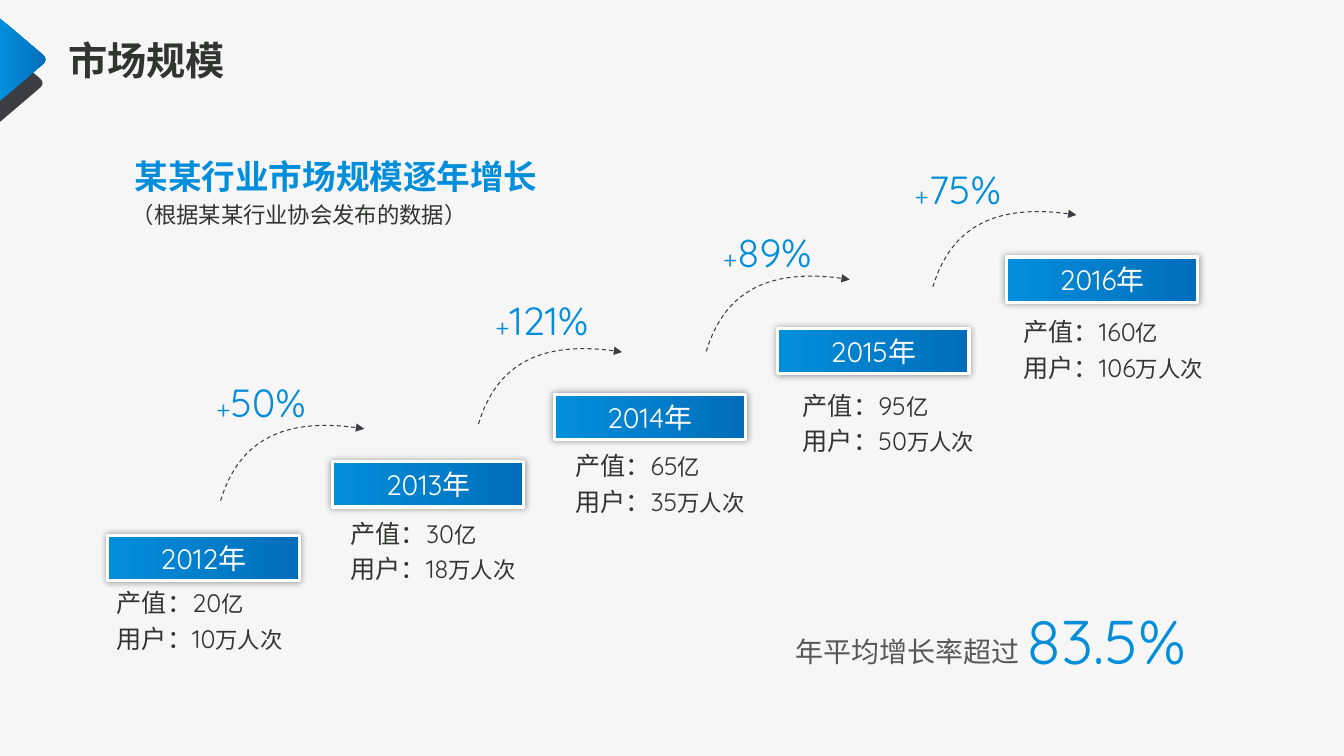
import dataclasses

import lxml.etree
import pptx
import pptx.dml.color
import pptx.enum.dml
import pptx.enum.lang
import pptx.enum.shapes
import pptx.enum.text
import pptx.oxml.ns
import pptx.util

Pt = pptx.util.Pt
qn = pptx.oxml.ns.qn
ALIGN = pptx.enum.text.PP_ALIGN
ANCHOR = pptx.enum.text.MSO_ANCHOR


@dataclasses.dataclass(frozen=True)
class Theme:
    font: str = "Quicksand"
    paper: str = "F6F6F6"
    ink: str = "313530"
    muted: str = "575757"
    dark: str = "3C3D42"
    white: str = "FFFFFF"
    blue: str = "038EDB"
    deep_blue: str = "026EBB"
    black: str = "000000"
    hero: int = 44
    title: int = 28
    heading: int = 24
    label: int = 20
    detail: int = 18
    small: int = 16


def rgb(code):
    return pptx.dml.color.RGBColor.from_string(code)


class SlideBuilder:
    def __init__(self, page, theme):
        self.page = page
        self.theme = theme
        page.background.fill.solid()
        page.background.fill.fore_color.rgb = rgb(theme.paper)

    def add_spans(self, frame, spans, align=ALIGN.LEFT, anchor=ANCHOR.TOP):
        frame.word_wrap = True
        frame.auto_size = pptx.enum.text.MSO_AUTO_SIZE.NONE
        frame.vertical_anchor = anchor
        para = frame.paragraphs[0]
        para.alignment = align
        for text, size, color, bold in spans:
            span = para.add_run()
            span.text = text
            font = span.font
            font.name = self.theme.font
            font.size = Pt(size)
            font.bold = bold
            font.color.rgb = rgb(color)
            font.language_id = pptx.enum.lang.MSO_LANGUAGE_ID.SIMPLIFIED_CHINESE
            lxml.etree.SubElement(
                span._r.get_or_add_rPr(), qn("a:ea"), typeface=self.theme.font)

    def title(self, left, top, width, height, text):
        box = self.page.shapes.title
        box.left, box.top, box.width, box.height = map(Pt, (left, top, width, height))
        self.add_spans(box.text_frame, [(text, self.theme.title, self.theme.ink, True)])

    def text(self, left, top, width, height, spans, align=ALIGN.LEFT):
        box = self.page.shapes.add_textbox(*map(Pt, (left, top, width, height)))
        self.add_spans(box.text_frame, spans, align)

    def blue_gradient(self, shape):
        shape.fill.gradient()
        shape.fill.gradient_angle = 0
        for stop, color in zip(
                shape.fill.gradient_stops, (self.theme.blue, self.theme.deep_blue)):
            stop.color.rgb = rgb(color)

    def banner(self, left, top, width, height, text):
        theme = self.theme
        box = self.page.shapes.add_shape(
            pptx.enum.shapes.MSO_SHAPE.RECTANGLE, *map(Pt, (left, top, width, height)))
        self.blue_gradient(box)
        box.line.color.rgb = rgb(theme.white)
        box.line.width = Pt(2.25)
        box.shadow.inherit = False
        effects = box._element.spPr.find(qn("a:effectLst"))
        shadow = lxml.etree.SubElement(
            effects, qn("a:outerShdw"), blurRad=str(Pt(5)), dist="0", dir="0",
            algn="ctr", rotWithShape="0")
        color = lxml.etree.SubElement(shadow, qn("a:srgbClr"), val=theme.black)
        lxml.etree.SubElement(color, qn("a:alpha"), val="40000")
        self.add_spans(box.text_frame, [(text, theme.label, theme.white, False)],
                       ALIGN.CENTER, ANCHOR.MIDDLE)

    def outline(self, points, curve_start, close):
        start, *rest = [(Pt(x), Pt(y)) for x, y in points]
        builder = self.page.shapes.build_freeform(*start, scale=1.0)
        builder.add_line_segments(rest, close=close)
        shape = builder.convert_to_shape()
        shape.shadow.inherit = False
        segments = shape._element.xpath(".//a:lnTo")[curve_start:curve_start + 3]
        curve = lxml.etree.Element(qn("a:cubicBezTo"))
        segments[0].addprevious(curve)
        for segment in segments:
            curve.append(segment[0])
            segment.getparent().remove(segment)
        return shape

    def corner(self, top, shoulder, tip_x, tip_depth, bottom, color=None):
        low = top + bottom - shoulder
        shape = self.outline(
            [(0, top), (tip_x, shoulder), (tip_x + tip_depth, shoulder + 2.2),
             (tip_x + tip_depth, low - 2.2), (tip_x, low), (0, bottom)],
            curve_start=1, close=True)
        shape.line.fill.background()
        if color:
            shape.fill.solid()
            shape.fill.fore_color.rgb = rgb(color)
        else:
            self.blue_gradient(shape)

    def growth_arrow(self, left, top):
        bend = [(0, 60.2), (13.4, 16), (48.8, 0), (102.6, 8.9)]
        shape = self.outline(
            [(left + x, top + y) for x, y in bend], curve_start=0, close=False)
        shape.fill.background()
        shape.line.color.rgb = rgb(self.theme.dark)
        shape.line.width = Pt(0.75)
        shape.line.dash_style = pptx.enum.dml.MSO_LINE.DASH
        lxml.etree.SubElement(
            shape.line._get_or_add_ln(), qn("a:tailEnd"), type="triangle")


YEARS = [
    ("2012", (77, 382.3), (76.3, 416.2), "20", "10"),
    ("2013", (237.6, 329.8), (243.4, 366.5), "30", "18"),
    ("2014", (396, 281.5), (403.9, 318.2), "65", "35"),
    ("2015", (555.8, 234.7), (566.6, 275), "95", "50"),
    ("2016", (719.3, 183.6), (724.3, 222.5), "160", "106"),
]
GROWTH = [
    ("50%", (147.6, 266.4), (157.7, 297.4)),
    ("121%", (347, 208.1), (342, 242.6)),
    ("89%", (509.8, 159.8), (504.7, 190.8)),
    ("75%", (646.6, 114.5), (666.7, 144.7)),
]
DETAIL_PITCH = 25.4


def main():
    theme = Theme()
    deck = pptx.Presentation()
    deck.slide_width, deck.slide_height = Pt(960.5), Pt(540)
    page = deck.slides.add_slide(deck.slide_layouts[5])
    slide = SlideBuilder(page, theme)

    slide.title(41.8, 22.3, 368.6, 41, "市场规模")
    slide.corner(31.7, 56.2, 28.8, 2.2, 87.1, theme.dark)
    slide.corner(13, 38.9, 30.2, 2.9, 72)
    slide.text(83.5, 108, 313.2, 36,
               [("某某行业市场规模逐年增长", theme.heading, theme.blue, True)], ALIGN.CENTER)
    slide.text(87.1, 140.4, 270, 26.6,
               [("（根据某某行业协会发布的数据）", theme.small, theme.ink, False)])

    for year, banner, detail, output, users in YEARS:
        slide.banner(*banner, 136.8, 32.4, year + "年")
        lines = [("产值：" + output, "亿"), ("用户：" + users, "万人次")]
        for row, (amount, unit) in enumerate(lines):
            slide.text(detail[0], detail[1] + row * DETAIL_PITCH, 160, 29,
                       [(amount, theme.detail, theme.ink, False),
                        (unit, theme.small, theme.ink, False)])

    for rate, label, arrow in GROWTH:
        slide.growth_arrow(*arrow)
        slide.text(*label, 94, 41, [("+", theme.detail, theme.blue, False),
                                    (rate, theme.title, theme.blue, False)])

    slide.text(722.9, 427, 135.4, 60.5,
               [("83.5%", theme.hero, theme.blue, False)], ALIGN.CENTER)
    slide.text(561.6, 450, 176.4, 31.7,
               [("年平均增长率超过", theme.label, theme.muted, False)])
    deck.save("out.pptx")


if __name__ == "__main__":
    main()
